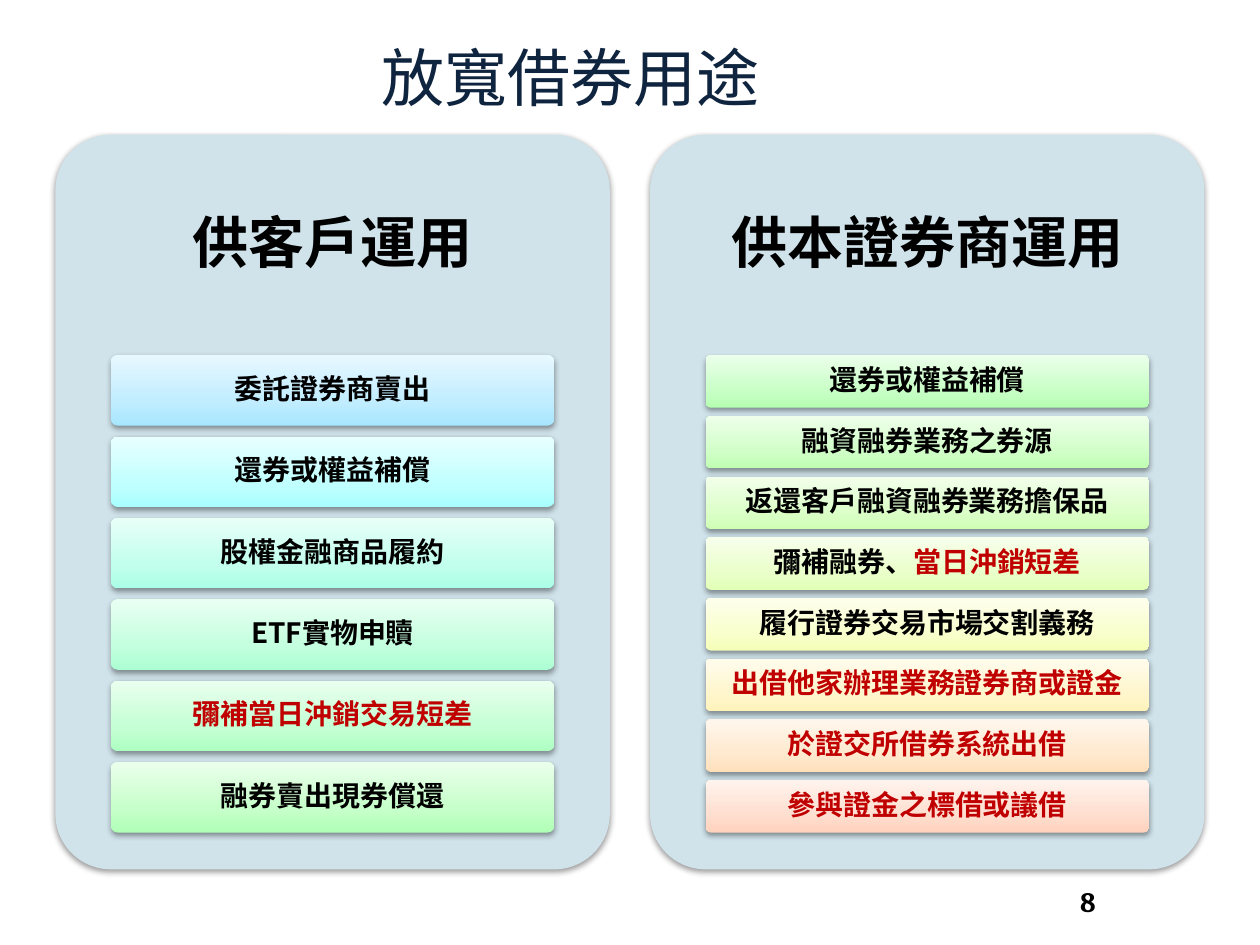
import lxml.etree
import pptx
import pptx.util
import pptx.dml.color
import pptx.enum.shapes
import pptx.enum.text
import pptx.oxml
import pptx.oxml.ns
from copy import deepcopy

Inches, Pt = pptx.util.Inches, pptx.util.Pt
RGBColor = pptx.dml.color.RGBColor
qn = pptx.oxml.ns.qn

BLACK = RGBColor(0x00, 0x00, 0x00)
RED = RGBColor(0xC0, 0x00, 0x00)
NAVY = RGBColor(0x0F, 0x24, 0x3E)
PANEL = RGBColor(0xD0, 0xE3, 0xEA)
HEAD_FONT, BODY_FONT = "Cambria", "Noto Sans CJK SC"

# Each item: base colour of its gradient, then (text, colour) runs
CLIENT_ITEMS = [
    (RGBColor(0xA7, 0xE6, 0xFF), [("委託證券商賣出", BLACK)]),
    (RGBColor(0xA9, 0xFF, 0xFF), [("還券或權益補償", BLACK)]),
    (RGBColor(0xAB, 0xFF, 0xE6), [("股權金融商品履約", BLACK)]),
    (RGBColor(0xAC, 0xFF, 0xD2), [("ETF實物申贖", BLACK)]),
    (RGBColor(0xAE, 0xFF, 0xC2), [("彌補當日沖銷交易短差", RED)]),
    (RGBColor(0xB0, 0xFF, 0xB6), [("融券賣出現券償還", BLACK)]),
]
BROKER_ITEMS = [
    (RGBColor(0xB4, 0xFF, 0xB1), [("還券或權益補償", BLACK)]),
    (RGBColor(0xC0, 0xFF, 0xB3), [("融資融券業務之券源", BLACK)]),
    (RGBColor(0xCF, 0xFF, 0xB5), [("返還客戶融資融券業務擔保品", BLACK)]),
    (RGBColor(0xE1, 0xFF, 0xB6), [("彌補融券、", BLACK), ("當日沖銷短差", RED)]),
    (RGBColor(0xF6, 0xFF, 0xB8), [("履行證券交易市場交割義務", BLACK)]),
    (RGBColor(0xFF, 0xF3, 0xBA), [("出借他家辦理業務證券商或證金", RED)]),
    (RGBColor(0xFF, 0xE0, 0xBB), [("於證交所借券系統出借", RED)]),
    (RGBColor(0xFF, 0xD2, 0xBD), [("參與證金之標借或議借", RED)]),
]

SHADOW = (
    '<a:effectLst xmlns:a="http://schemas.openxmlformats.org/drawingml/2006/main">'
    '<a:outerShdw blurRad="40000" dist="20000" dir="5400000" rotWithShape="0">'
    '<a:srgbClr val="000000"><a:alpha val="38000"/></a:srgbClr>'
    '</a:outerShdw></a:effectLst>'
)


def lighten(color, share):
    return RGBColor(*(round(c + (255 - c) * share) for c in color))


def fill_gradient(fill, base):
    """Base colour at the bottom, fading to near white at the top."""
    fill.gradient()
    fill.gradient_angle = 90
    first = fill._fill._gradFill.gsLst[0]
    first.addnext(deepcopy(first))
    for stop, (position, share) in zip(fill.gradient_stops, [(0, 0), (0.35, 0.29), (1, 0.73)]):
        stop.position = position
        stop.color.rgb = lighten(base, share)


def add_card(slide, x, y, w, h):
    """Rounded rectangle without outline, with a soft shadow below."""
    sp = slide.shapes.add_shape(pptx.enum.shapes.MSO_SHAPE.ROUNDED_RECTANGLE,
                                Inches(x), Inches(y), Inches(w), Inches(h))
    sp.adjustments[0] = 0.1
    sp.line.fill.background()
    sp._element.spPr.append(pptx.oxml.parse_xml(SHADOW))
    return sp


def set_text(sp, runs, size, font, bold=True, inset=(0.1, 0.05)):
    tf = sp.text_frame
    tf.word_wrap = True
    tf.vertical_anchor = pptx.enum.text.MSO_ANCHOR.MIDDLE
    tf.margin_left = tf.margin_right = Inches(inset[0])
    tf.margin_top = tf.margin_bottom = Inches(inset[1])
    p = tf.paragraphs[0]
    p.alignment = pptx.enum.text.PP_ALIGN.CENTER
    p.font.size, p.font.bold, p.font.name = Pt(size), bold, font
    if font == BODY_FONT:
        p.line_spacing = 0.9
        ea = lxml.etree.SubElement(p.font._element, qn("a:ea"))
        ea.set("typeface", font)
    for text, color in runs:
        r = p.add_run()
        r.text = text
        r.font.color.rgb = color


def add_label(slide, x, y, w, h, runs, size, font, **options):
    sp = slide.shapes.add_textbox(Inches(x), Inches(y), Inches(w), Inches(h))
    set_text(sp, runs, size, font, **options)


def add_panel(slide, x, y, w, h, heading, items):
    """Panel: heading in the top 30 %, stacked items in the next 65 %."""
    panel = add_card(slide, x, y, w, h)
    panel.fill.solid()
    panel.fill.fore_color.rgb = PANEL
    add_label(slide, x, y, w, h * 0.3, [(heading, BLACK)], 32, BODY_FONT, inset=(0.13, 0.13))

    # Gaps are a fixed share of the item height
    gap_share = 0.154
    item_h = h * 0.65 / (len(items) + (len(items) - 1) * gap_share)
    for i, (base, runs) in enumerate(items):
        top = y + h * 0.3 + i * item_h * (1 + gap_share)
        sp = add_card(slide, x + w * 0.1, top, w * 0.8, item_h)
        fill_gradient(sp.fill, base)
        set_text(sp, runs, 16, BODY_FONT, inset=(0.04, 0.03))


def main():
    prs = pptx.Presentation()
    prs.slide_width, prs.slide_height = Inches(10), Inches(7.5)
    slide = prs.slides.add_slide(prs.slide_layouts[6])

    # Title and page number
    add_label(slide, 1.38, 0.21, 6.3, 0.79, [("放寬借券用途", NAVY)], 36, HEAD_FONT, bold=False)
    add_label(slide, 7.47, 6.95, 2.33, 0.4, [("8", BLACK)], 16, HEAD_FONT)

    # Two panels side by side
    add_panel(slide, 0.44, 1.07, 4.4, 5.83, "供客戶運用", CLIENT_ITEMS)
    add_panel(slide, 5.16, 1.07, 4.4, 5.83, "供本證券商運用", BROKER_ITEMS)

    prs.save("out.pptx")


if __name__ == "__main__":
    main()
